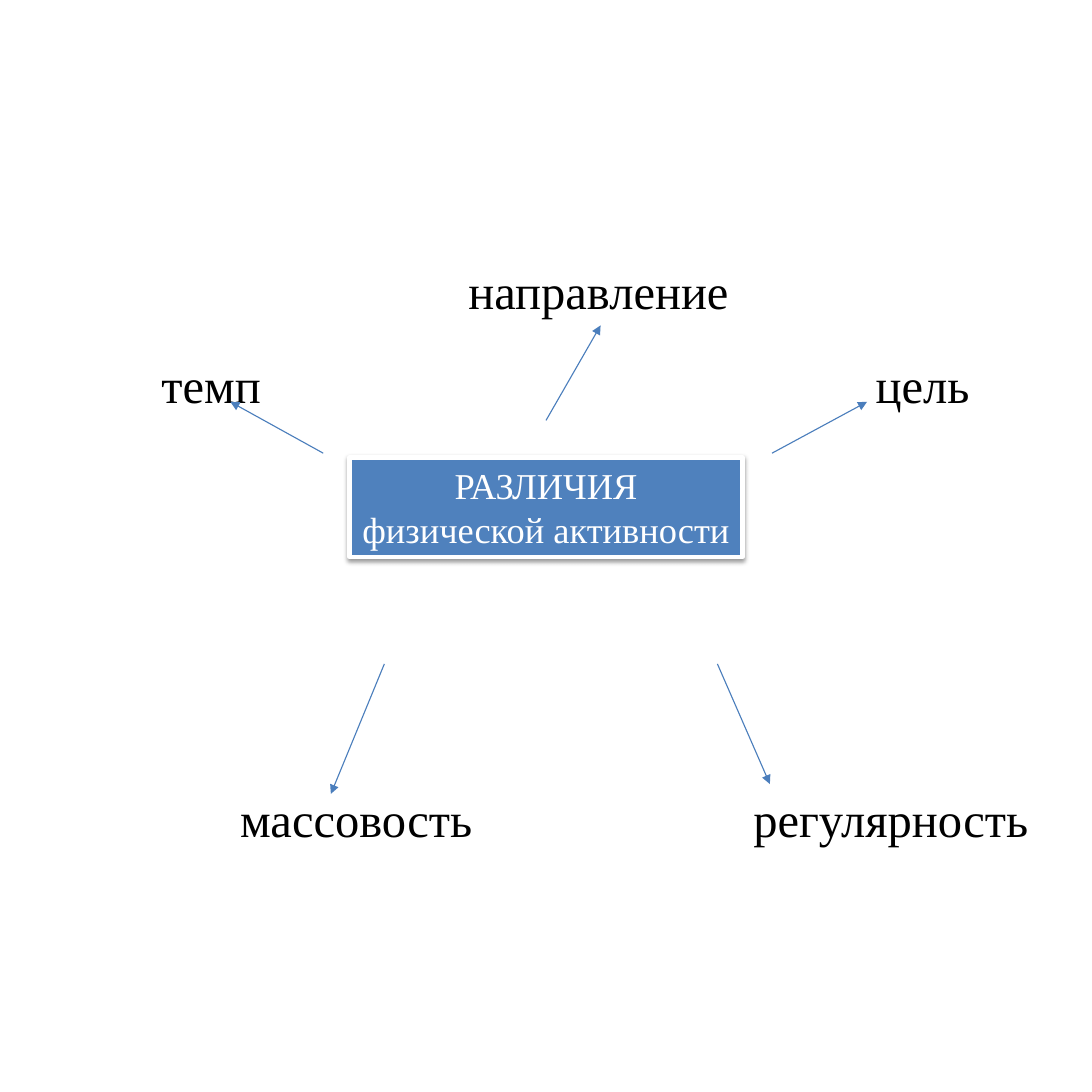
from dataclasses import dataclass
from typing import Any

import pptx
import pptx.dml.color
import pptx.enum.shapes
import pptx.enum.text
import pptx.oxml
import pptx.oxml.ns
import pptx.util

Inches = pptx.util.Inches
NAMESPACE = pptx.oxml.ns.nsdecls("a")
FONT_NAME = "Times New Roman"
BLUE = "4F81BD"
ARROW_BLUE = "4B7EBC"
WHITE = "FFFFFF"
BLACK = "000000"
LABEL_HEIGHT = 0.64
UPPER_ROW = 3.2
LOWER_ROW = 7.18

FRAME_FORMAT = {
    "word_wrap": False,
    "auto_size": pptx.enum.text.MSO_AUTO_SIZE.SHAPE_TO_FIT_TEXT,
}


@dataclass(frozen=True)
class Label:
    text: str
    left: float
    top: float
    width: float


@dataclass(frozen=True)
class Arrow:
    start: tuple[float, float]
    end: tuple[float, float]


LABELS = [
    Label("темп", 1.38, UPPER_ROW, 1.12),
    Label("массовость", 2.1, LOWER_ROW, 2.35),
    Label("цель", 7.92, UPPER_ROW, 1.07),
    Label("направление", 4.19, 2.34, 2.62),
    Label("регулярность", 6.8, LOWER_ROW, 2.76),
]

ARROWS = [
    Arrow((5, 3.85), (5.5, 2.98)),
    Arrow((2.96, 4.15), (2.11, 3.68)),
    Arrow((7.07, 4.15), (7.94, 3.68)),
    Arrow((3.52, 6.08), (3.03, 7.27)),
    Arrow((6.57, 6.08), (7.05, 7.18)),
]


def color(value: str) -> pptx.dml.color.RGBColor:
    return pptx.dml.color.RGBColor.from_string(value)


def apply_format(target: Any, values: dict[str, Any]) -> None:
    for name, value in values.items():
        setattr(target, name, value)


def write_text(box: Any, lines: list[str], size: int, text_color: str,
               alignment: pptx.enum.text.PP_ALIGN) -> None:
    frame = box.text_frame
    apply_format(frame, FRAME_FORMAT)
    for index, line in enumerate(lines):
        para = frame.add_paragraph() if index else frame.paragraphs[0]
        para.alignment = alignment
        span = para.add_run()
        span.text = line
        apply_format(span.font, {"name": FONT_NAME, "size": pptx.util.Pt(size)})
        span.font.color.rgb = color(text_color)


def add_center(page: Any) -> None:
    box = page.shapes.add_shape(
        pptx.enum.shapes.MSO_SHAPE.RECTANGLE,
        Inches(3.2), Inches(4.19), Inches(3.6), Inches(0.91))
    box.fill.solid()
    box.fill.fore_color.rgb = color(BLUE)
    box.line.color.rgb = color(WHITE)
    box.line.width = pptx.util.Pt(3)
    box.shadow.inherit = False
    effects = box.element.spPr.find(pptx.oxml.ns.qn("a:effectLst"))
    effects.append(pptx.oxml.parse_xml(
        f'<a:outerShdw {NAMESPACE} blurRad="{pptx.util.Pt(3.1)}" '
        f'dist="{pptx.util.Pt(1.6)}" dir="5400000" rotWithShape="0">'
        f'<a:srgbClr val="{BLACK}"><a:alpha val="38000"/></a:srgbClr>'
        '</a:outerShdw>'))
    write_text(box, ["РАЗЛИЧИЯ", "физической активности"], 24, WHITE,
               pptx.enum.text.PP_ALIGN.CENTER)


def add_label(page: Any, label: Label) -> None:
    box = page.shapes.add_textbox(
        Inches(label.left), Inches(label.top),
        Inches(label.width), Inches(LABEL_HEIGHT))
    write_text(box, [label.text], 32, BLACK, pptx.enum.text.PP_ALIGN.LEFT)


def add_arrow(page: Any, arrow: Arrow) -> None:
    connector = page.shapes.add_connector(
        pptx.enum.shapes.MSO_CONNECTOR.STRAIGHT,
        *map(Inches, arrow.start + arrow.end))
    connector.line.color.rgb = color(ARROW_BLUE)
    connector.line.width = pptx.util.Pt(0.75)
    properties = connector.element.spPr
    outline = properties.find(pptx.oxml.ns.qn("a:ln"))
    outline.append(pptx.oxml.parse_xml(f'<a:tailEnd {NAMESPACE} type="triangle"/>'))
    properties.append(pptx.oxml.parse_xml(f"<a:effectLst {NAMESPACE}/>"))


def main() -> None:
    deck = pptx.Presentation()
    apply_format(deck, {"slide_width": Inches(10), "slide_height": Inches(10)})
    page = deck.slides.add_slide(deck.slide_layouts.get_by_name("Blank"))
    add_center(page)
    for label in LABELS:
        add_label(page, label)
    for arrow in ARROWS:
        add_arrow(page, arrow)
    deck.save("out.pptx")


if __name__ == "__main__":
    main()
